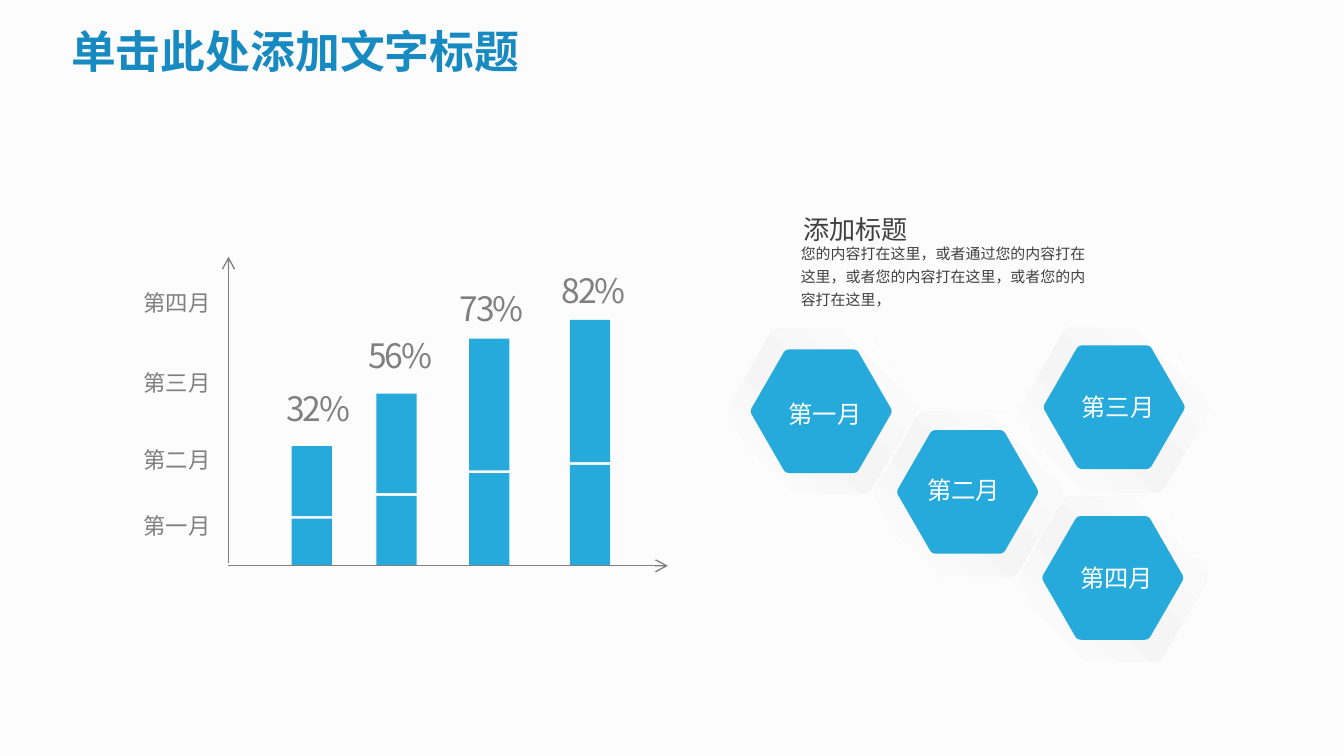
from copy import deepcopy
from math import cos, pi, sin, sqrt

from lxml.etree import SubElement
from pptx import Presentation
from pptx.dml.color import RGBColor
from pptx.enum.shapes import MSO_CONNECTOR as Connector, MSO_SHAPE as Shape
from pptx.enum.text import MSO_ANCHOR as Anchor, MSO_AUTO_SIZE as AutoSize, PP_ALIGN as Align
from pptx.oxml.ns import qn
from pptx.util import Inches, Pt

FONT = "Noto Sans CJK SC"
BLUE, TITLE_BLUE, GREY, DARK, WHITE = "26AADB", "178AC1", "808080", "404040", "FFFFFF"
MONTHS = ["第一月", "第二月", "第三月", "第四月"]
BODY = "您的内容打在这里，或者通过您的内容打在这里，或者您的内容打在这里，或者您的内容打在这里，"

AXIS_X, AXIS_Y = 1.7, 4.21
BAR_WIDTH, BAR_GAP = 0.3, 0.02
# label, bar left, bar top, top of lower part, label left, label top
BARS = [
    ("32%", 2.17, 3.32, 3.86, 2.05, 2.85),
    ("56%", 2.80, 2.93, 3.69, 2.66, 2.45),
    ("73%", 3.49, 2.52, 3.52, 3.34, 2.10),
    ("82%", 4.24, 2.38, 3.46, 4.10, 1.97),
]
MONTH_TOPS = [3.76, 3.27, 2.70, 2.10]
# centre x, centre y of the plate, centre y of the core, label left, label top
HEXAGONS = [
    (6.11, 3.06, 3.06, 5.77, 2.92),
    (7.20, 3.68, 3.66, 6.80, 3.49),
    (8.29, 3.05, 3.03, 7.95, 2.87),
    (8.28, 4.31, 4.30, 7.94, 4.14),
]


def rgb(value):
    return RGBColor.from_string(value)


def paint(shape, color):
    shape.fill.solid()
    shape.fill.fore_color.rgb = rgb(color)


def write(frame, text, size, color, bold=False, wrap=True, insets=(0.1, 0.05),
          line_spacing=None, tracking=None):
    """Fill a text frame; insets are horizontal and vertical inches."""
    side, edge = map(Inches, insets)
    frame_format = {
        "word_wrap": wrap, "auto_size": AutoSize.SHAPE_TO_FIT_TEXT,
        "vertical_anchor": Anchor.TOP,
        "margin_left": side, "margin_right": side,
        "margin_top": edge, "margin_bottom": edge,
    }
    for name, value in frame_format.items():
        setattr(frame, name, value)
    para = frame.paragraphs[0]
    para.alignment = Align.LEFT
    para.line_spacing = line_spacing
    span = para.add_run()
    span.text = text
    for name, value in {"size": Pt(size), "bold": bold, "name": FONT}.items():
        setattr(span.font, name, value)
    span.font.color.rgb = rgb(color)
    properties = span.font._element
    SubElement(properties, qn("a:ea")).set("typeface", FONT)
    if tracking is not None:
        properties.set("spc", str(round(tracking * 100)))


def add_text(shapes, place, text, size, color, **options):
    box = shapes.add_textbox(*map(Inches, place))
    write(box.text_frame, text, size, color, **options)


def add_title(page, text):
    title = page.shapes.title
    title.left, title.top, title.width, title.height = map(Inches, (0.43, 0.13, 3.57, 0.5))
    write(title.text_frame, text, 24, TITLE_BLUE, bold=True, wrap=False)


def add_bar(shapes, left, top, split):
    for start, end in ((split, AXIS_Y), (top, split - BAR_GAP)):
        bar = shapes.add_shape(
            Shape.RECTANGLE, *map(Inches, (left, start, BAR_WIDTH, end - start)))
        bar.shadow.inherit = False
        paint(bar, BLUE)
        bar.line.fill.background()


def add_axis(shapes, start, end):
    axis = shapes.add_connector(Connector.STRAIGHT, *map(Inches, start + end))
    axis.line.color.rgb = rgb(GREY)
    axis.line.width = Pt(0.75)
    properties = axis._element.spPr
    SubElement(properties.find(qn("a:ln")), qn("a:tailEnd")).set("type", "arrow")
    SubElement(properties, qn("a:effectLst"))


def rounded_hexagon_points(x, y, height, cut=0.055, steps=4):
    """Trace a hexagon whose corners are quadratic curves."""
    radius = height / sqrt(3)
    corners = [(x + radius * cos(k * pi / 3), y + radius * sin(k * pi / 3)) for k in range(6)]
    points = []
    for k, corner in enumerate(corners):
        before, after = corners[k - 1], corners[(k + 1) % 6]
        for step in range(steps + 1):
            t = step / steps
            toward_before, toward_after = cut * (1 - t) ** 2, cut * t ** 2
            points.append(tuple(
                Inches(c + toward_before * (b - c) + toward_after * (a - c))
                for b, c, a in zip(before, corner, after)))
    return points


def add_hexagon(shapes, x, y, height):
    points = rounded_hexagon_points(x, y, height)
    builder = shapes.build_freeform(*points[0])
    builder.add_line_segments(points[1:], close=True)
    hexagon = builder.convert_to_shape()
    hexagon.shadow.inherit = False
    hexagon.line.fill.background()
    return hexagon


def paint_sheen(shape):
    """Fade from white through pale grey to white, towards the upper right."""
    shape.fill.gradient()
    shape.fill.gradient_angle = 45
    stop_list = shape._element.spPr.find(".//" + qn("a:gsLst"))
    stop_list.insert(0, deepcopy(stop_list[0]))
    sheen = ((0, WHITE), (0.47, "F5F5F5"), (1, WHITE))
    for stop, (position, color) in zip(shape.fill.gradient_stops, sheen):
        stop.position = position
        stop.color.rgb = rgb(color)


def add_month_hexagon(page, month, x, plate_y, core_y, label_left, label_top):
    shapes = page.shapes.add_group_shape().shapes
    paint(add_hexagon(shapes, x, plate_y, 1.24), WHITE)
    paint_sheen(add_hexagon(shapes, x, plate_y, 1.23))
    paint(add_hexagon(shapes, x, core_y, 0.92), BLUE)
    add_text(shapes, (label_left, label_top, 0.87, 0.32), month, 13, WHITE)


def main():
    deck = Presentation()
    deck.slide_width = Inches(10)
    deck.slide_height = deck.slide_width * 9 // 16
    page = deck.slides.add_slide(deck.slide_layouts[5])
    paint(page.background, "FCFCFC")
    add_title(page, "单击此处添加文字标题")

    for label, left, top, split, label_left, label_top in BARS:
        add_text(page.shapes, (label_left, label_top, 0.65, 0.38), label, 18, GREY,
                 insets=(0.08, 0.04), tracking=-1.1)
        add_bar(page.shapes, left, top, split)

    for month, hexagon in zip(MONTHS, HEXAGONS):
        add_month_hexagon(page, month, *hexagon)

    add_axis(page.shapes, (AXIS_X, AXIS_Y), (4.97, AXIS_Y))
    add_axis(page.shapes, (AXIS_X, 4.19), (AXIS_X, 1.91))
    for month, top in zip(MONTHS, MONTH_TOPS):
        add_text(page.shapes, (0.97, top, 0.73, 0.3), month, 12, GREY)

    add_text(page.shapes, (5.86, 1.73, 2.39, 0.63), BODY, 8, DARK, line_spacing=1.3)
    add_text(page.shapes, (5.88, 1.47, 1.04, 0.35), "添加标题", 14, DARK,
             insets=(0.1, 0), line_spacing=1.5)
    deck.save("out.pptx")


if __name__ == "__main__":
    main()
